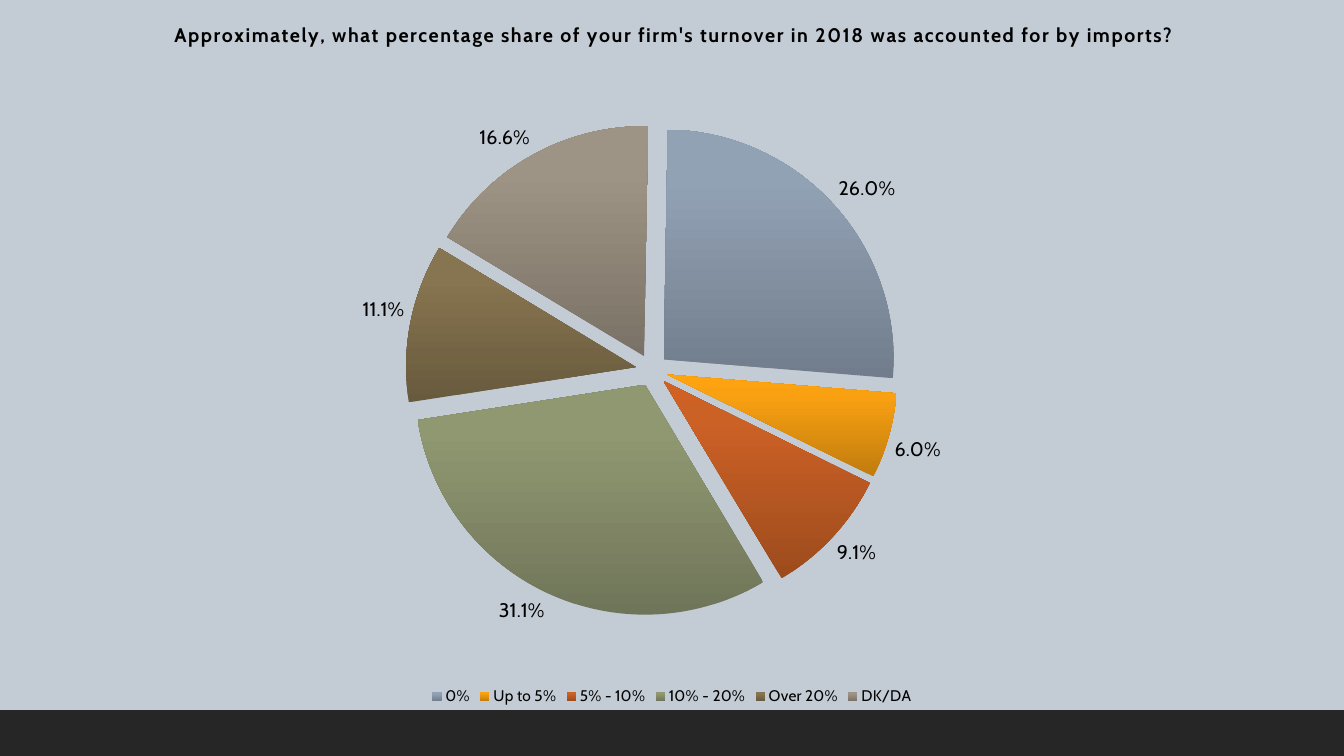
from pptx import Presentation
from pptx.chart.data import CategoryChartData
from pptx.dml.color import RGBColor
from pptx.enum.chart import XL_CHART_TYPE, XL_LABEL_POSITION, XL_LEGEND_POSITION
from pptx.enum.shapes import MSO_SHAPE
from pptx.oxml import parse_xml
from pptx.oxml.ns import nsdecls, qn
from pptx.util import Emu, Pt

EMU_PER_PX = 914400 / 100.8
SLIDE_WIDTH, SLIDE_HEIGHT = 1344, 756
FOOTER_TOP, CHART_HEIGHT = 706, 710
FONT = "Cabin"
EXPLOSION = 7

COLORS = {"background": "C3CBD4", "footer": "262626", "text": "000000"}

TITLE = ("Approximately, what percentage share of your firm's turnover "
         "in 2018 was accounted for by imports?")

# Category, share, gradient colours from the bottom up
SLICES = [
    ("0%", 26, ("717D8C", "92A2B5", "92A3B7")),
    ("Up to 5%", 6, ("C07C0E", "FAA112", "FFA30E")),
    ("5% - 10%", 9.1, ("9D4B1D", "CC6126", "D06123")),
    ("10% - 20%", 31.1, ("6F7558", "909872", "919972")),
    ("Over 20%", 11.1, ("685A3D", "877450", "89754F")),
    ("DK/DA", 16.6, ("7A7266", "9E9485", "9F9585")),
]
GRADIENT_STOPS = (0, 80, 100)


def px(length):
    return Emu(round(length * EMU_PER_PX))


def set_font(font, size, bold=False):
    font.name = FONT
    font.size = Pt(size)
    font.bold = bold
    font.color.rgb = RGBColor.from_string(COLORS["text"])


def chart_element(tag, value):
    return parse_xml(f'<c:{tag} {nsdecls("c")} val="{value}"/>')


def manual_layout(**settings):
    """Build a chart layout; settings are given in schema order."""
    items = "".join(f'<c:{tag} val="{value}"/>' for tag, value in settings.items())
    return parse_xml(f'<c:layout {nsdecls("c")}><c:manualLayout>{items}'
                     "</c:manualLayout></c:layout>")


def remove_layout(element):
    for layout in element.findall(qn("c:layout")):
        element.remove(layout)


def add_footer(slide):
    footer = slide.shapes.add_shape(MSO_SHAPE.RECTANGLE, 0, px(FOOTER_TOP),
                                    px(SLIDE_WIDTH), px(SLIDE_HEIGHT - FOOTER_TOP))
    footer.shadow.inherit = False
    footer.fill.solid()
    footer.fill.fore_color.rgb = RGBColor.from_string(COLORS["footer"])
    footer.line.fill.background()


def add_pie(slide):
    data = CategoryChartData(number_format="0.0")
    data.categories = [name for name, _, _ in SLICES]
    data.add_series("Series 1", [share for _, share, _ in SLICES])
    return slide.shapes.add_chart(XL_CHART_TYPE.PIE, 0, 0, px(SLIDE_WIDTH),
                                  px(CHART_HEIGHT), data).chart


def set_background(chart):
    fill = parse_xml(
        f'<c:spPr {nsdecls("c", "a")}><a:solidFill><a:srgbClr '
        f'val="{COLORS["background"]}"/></a:solidFill>'
        "<a:ln><a:noFill/></a:ln></c:spPr>")
    chart._chartSpace.find(qn("c:chart")).addnext(fill)


def set_title(chart):
    chart.has_title = True
    paragraph = chart.chart_title.text_frame.paragraphs[0]
    paragraph.text = TITLE
    run = paragraph.runs[0]
    set_font(run.font, 14, bold=True)
    run._r.get_or_add_rPr().set("spc", "100")
    title = chart._chartSpace.find(qn("c:chart")).find(qn("c:title"))
    remove_layout(title)
    title.find(qn("c:tx")).addnext(
        manual_layout(xMode="edge", yMode="edge", x=0.127, y=0.025))


def set_legend(chart):
    chart.has_legend = True
    chart.legend.position = XL_LEGEND_POSITION.BOTTOM
    chart.legend.include_in_layout = False
    set_font(chart.legend.font, 11)


def set_plot(chart):
    plot = chart.plots[0]
    plot.vary_by_categories = True
    for angle in plot._element.findall(qn("c:firstSliceAng")):
        plot._element.remove(angle)
    plot._element.append(chart_element("firstSliceAng", 1))
    plot_area = plot._element.getparent()
    remove_layout(plot_area)
    plot_area.insert(0, manual_layout(
        layoutTarget="inner", xMode="edge", yMode="edge",
        x=0.233, y=0.175, w=0.504, h=0.693))


def fill_slice(point, colors):
    point.format.line.fill.background()
    stops = "".join(
        f'<a:gs pos="{position * 1000}"><a:srgbClr val="{color}"/></a:gs>'
        for position, color in zip(GRADIENT_STOPS, colors))
    gradient = parse_xml(
        f'<a:gradFill {nsdecls("a")} rotWithShape="1"><a:gsLst>{stops}</a:gsLst>'
        '<a:lin ang="16200000" scaled="0"/></a:gradFill>')
    return gradient


def set_slices(series):
    series.format.line.fill.background()
    series._element.find(qn("c:spPr")).addnext(chart_element("explosion", EXPLOSION))
    for index, (_, _, colors) in enumerate(SLICES):
        gradient = fill_slice(series.points[index], colors)
        properties = series._element.findall(qn("c:dPt"))[index].find(qn("c:spPr"))
        properties.insert(0, gradient)
        properties.addprevious(chart_element("explosion", EXPLOSION))


def set_labels(series):
    labels = series.data_labels
    labels.show_value = False
    labels.show_percentage = True
    labels.number_format = "0.0%"
    labels.number_format_is_linked = False
    labels.position = XL_LABEL_POSITION.OUTSIDE_END
    set_font(labels.font, 14)


def main():
    presentation = Presentation()
    presentation.slide_width = px(SLIDE_WIDTH)
    presentation.slide_height = px(SLIDE_HEIGHT)
    slide = presentation.slides.add_slide(presentation.slide_layouts[6])
    add_footer(slide)
    chart = add_pie(slide)
    set_font(chart.font, 10)
    set_background(chart)
    set_title(chart)
    set_legend(chart)
    set_plot(chart)
    series = chart.plots[0].series[0]
    set_slices(series)
    set_labels(series)
    presentation.save("out.pptx")


if __name__ == "__main__":
    main()
